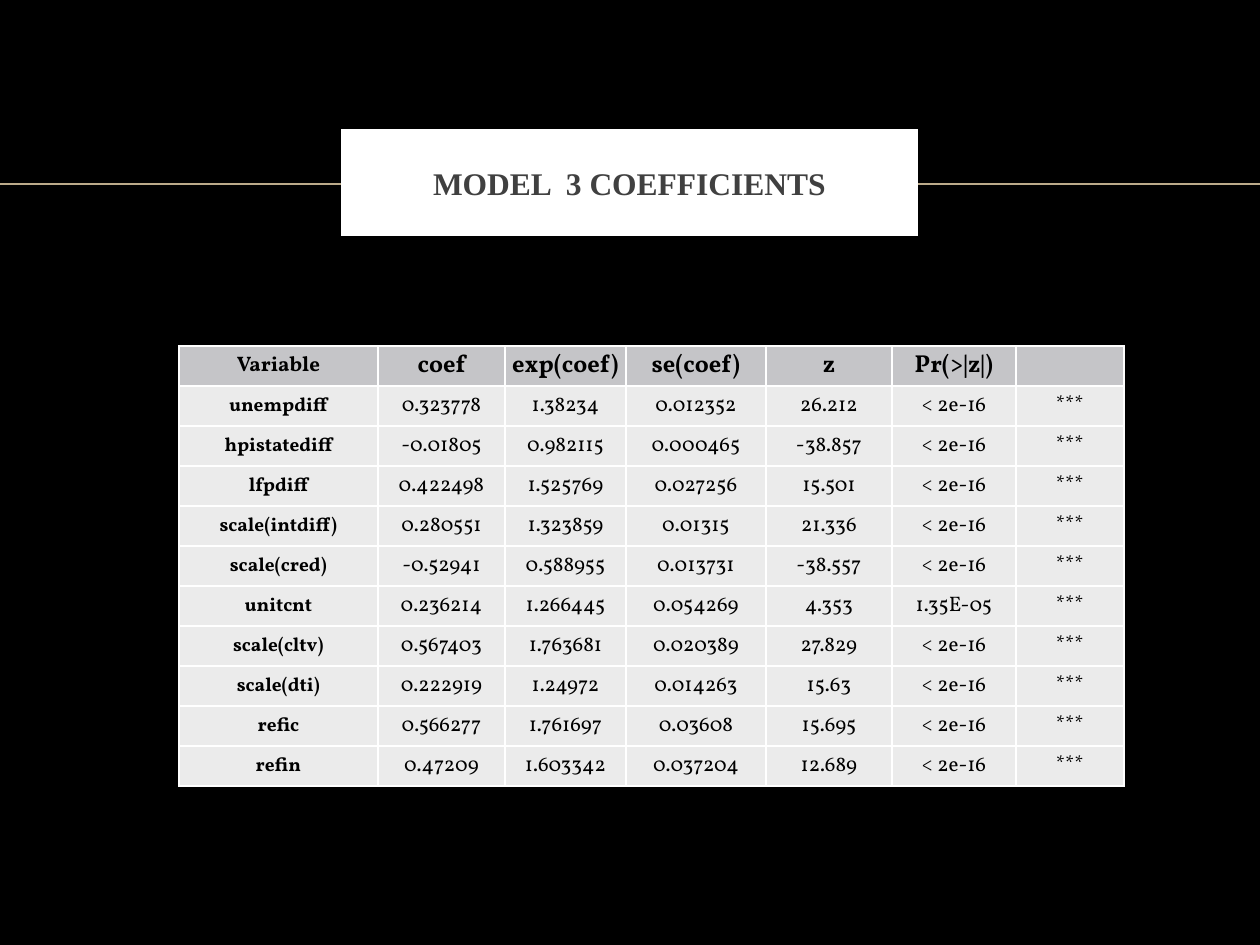
from lxml.etree import SubElement as sub
from pptx import Presentation
from pptx.dml.color import RGBColor
from pptx.enum.shapes import MSO_CONNECTOR as CONN, MSO_SHAPE as SHAPE
from pptx.enum.text import MSO_ANCHOR as ANCHOR, PP_ALIGN as ALIGN
from pptx.oxml.ns import qn
from pptx.util import Emu, Pt

BLACK = RGBColor(0x00, 0x00, 0x00)
WHITE = RGBColor(0xFF, 0xFF, 0xFF)
DARK = RGBColor(0x40, 0x40, 0x40)
TAN = RGBColor(0xBB, 0xAA, 0x8A)
HEAD = RGBColor(0xC5, 0xC5, 0xC8)
BODY = RGBColor(0xEB, 0xEB, 0xEB)

WIDE, HIGH = 1260, 945
COLS = [199, 127, 121, 140, 126, 124, 108]
ROW = 40
SMALL = "< 2e-16"
STARS = "***"

HEADER = ["Variable", "coef", "exp(coef)", "se(coef)", "z", "Pr(>|z|)", ""]
MODEL = [
    ["unempdiff", "0.323778", "1.38234", "0.012352", "26.212", SMALL, STARS],
    ["hpistatediff", "-0.01805", "0.982115", "0.000465", "-38.857", SMALL, STARS],
    ["lfpdiff", "0.422498", "1.525769", "0.027256", "15.501", SMALL, STARS],
    ["scale(intdiff)", "0.280551", "1.323859", "0.01315", "21.336", SMALL, STARS],
    ["scale(cred)", "-0.52941", "0.588955", "0.013731", "-38.557", SMALL, STARS],
    ["unitcnt", "0.236214", "1.266445", "0.054269", "4.353", "1.35E-05", STARS],
    ["scale(cltv)", "0.567403", "1.763681", "0.020389", "27.829", SMALL, STARS],
    ["scale(dti)", "0.222919", "1.24972", "0.014263", "15.63", SMALL, STARS],
    ["refic", "0.566277", "1.761697", "0.03608", "15.695", SMALL, STARS],
    ["refin", "0.47209", "1.603342", "0.037204", "12.689", SMALL, STARS],
]


def px(n):
    return Emu(round(n * 914400 / 126))


def write(frame, text, size, font, color, bold):
    para = frame.paragraphs[0]
    para.alignment = ALIGN.CENTER
    run = para.add_run()
    run.text = text
    run.font.size = Pt(size)
    run.font.name = font
    run.font.color.rgb = color
    run.font.bold = bold
    return para


def add_rule(slide, y):
    rule = slide.shapes.add_connector(CONN.STRAIGHT, 0, px(y), px(WIDE), px(y))
    rule.line.color.rgb = TAN
    rule.line.width = Pt(1)
    sub(rule._element.spPr, qn("a:effectLst"))


def add_title(slide, text, x, y, w, h):
    box = slide.shapes.add_shape(SHAPE.RECTANGLE, px(x), px(y), px(w), px(h))
    box.shadow.inherit = False
    box.fill.solid()
    box.fill.fore_color.rgb = WHITE
    box.line.color.rgb = WHITE
    box.line.width = Pt(6)
    sub(box.line._get_or_add_ln(), qn("a:miter"), lim="800000")  # square corners
    box.text_frame.vertical_anchor = ANCHOR.MIDDLE
    para = write(box.text_frame, text, 18, "Times New Roman", DARK, True)
    para.space_before = Pt(4)


def add_edges(cell):
    props = cell._tc.get_or_add_tcPr()
    for i, side in enumerate(("lnL", "lnR", "lnT", "lnB")):
        edge = props.makeelement(qn("a:" + side), {"w": str(Pt(1))})
        fill = sub(edge, qn("a:solidFill"))
        sub(fill, qn("a:srgbClr"), val=str(WHITE))
        props.insert(i, edge)  # edges come before the fill


def fill_cell(cell, text, size, bold, color):
    cell.fill.solid()
    cell.fill.fore_color.rgb = color
    cell.vertical_anchor = ANCHOR.MIDDLE
    cell.margin_left = cell.margin_right = cell.margin_top = px(1)
    cell.margin_bottom = 0
    add_edges(cell)
    if text:
        write(cell.text_frame, text, size, "Vollkorn", BLACK, bold)


def add_grid(slide, x, y):
    rows = [HEADER] + MODEL
    grid = slide.shapes.add_table(len(rows), len(COLS), px(x), px(y),
                                  px(sum(COLS)), px(ROW * len(rows))).table
    for col, width in zip(grid.columns, COLS):
        col.width = px(width)
    for r, row in enumerate(rows):
        grid.rows[r].height = px(ROW)
        for c, text in enumerate(row):
            top, first = r == 0, c == 0
            size = 11 if first and not top else 14 if top and not first else 12
            fill_cell(grid.cell(r, c), text, size, top or first,
                      HEAD if top else BODY)


def main():
    deck = Presentation()
    deck.slide_width, deck.slide_height = px(WIDE), px(HIGH)
    slide = deck.slides.add_slide(deck.slide_layouts[6])
    back = slide.background.fill
    back.solid()
    back.fore_color.rgb = BLACK

    # Title box over a full-width rule
    add_rule(slide, 184)
    add_title(slide, "MODEL  3 COEFFICIENTS", 346, 134, 567, 97)

    # Coefficient table
    add_grid(slide, 179, 346)
    deck.save("out.pptx")


if __name__ == "__main__":
    main()
